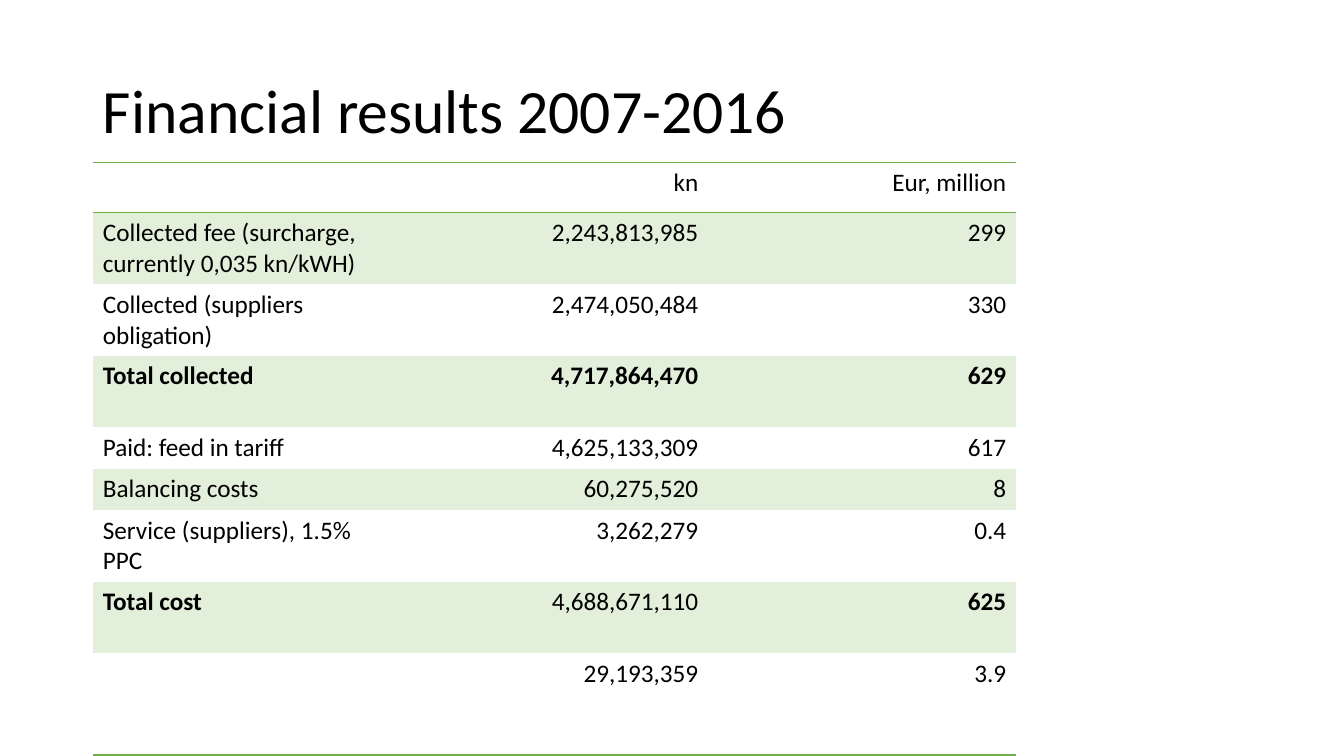
import pptx
import pptx.dml.color
import pptx.enum.text
import pptx.oxml
import pptx.oxml.ns
import pptx.util
from pptx.util import Inches

RGBColor = pptx.dml.color.RGBColor
ALIGN = pptx.enum.text.PP_ALIGN
ANCHOR = pptx.enum.text.MSO_ANCHOR

BLACK = RGBColor(0x00, 0x00, 0x00)
GREEN = RGBColor(0x70, 0xAD, 0x47)
PALE_GREEN = RGBColor(0xE2, 0xEF, 0xDA)

PLAIN_TABLE_STYLE = "{2D5ABB26-0587-4C30-8999-92F81FD0307C}"
TITLE_FONT = {"name": "Calibri", "size": pptx.util.Pt(44), "bold": False}
CELL_FONT = {"name": "Calibri", "size": pptx.util.Pt(18), "bold": False}

# Row height in inches, then the cell texts
RESULTS = [
    (0.5, "", "kn", "Eur, million"),
    (0.71, "Collected fee (surcharge, currently 0,035 kn/kWH)", "2,243,813,985", "299"),
    (0.71, "Collected (suppliers obligation)", "2,474,050,484", "330"),
    (0.71, "Total collected", "4,717,864,470", "629"),
    (0.41, "Paid: feed in tariff", "4,625,133,309", "617"),
    (0.41, "Balancing costs", "60,275,520", "8"),
    (0.71, "Service (suppliers), 1.5% PPC", "3,262,279", "0.4"),
    (0.71, "Total cost", "4,688,671,110", "625"),
    (1.01, "", "29,193,359", "3.9"),
]
BOLD_TEXTS = {"Total collected", "4,717,864,470", "629", "Total cost", "625"}


def format_font(font, values):
    for name, value in values.items():
        setattr(font, name, value)
    font.color.rgb = BLACK


def add_border(cell, side):
    cell._tc.get_or_add_tcPr().append(pptx.oxml.parse_xml(
        f'<a:ln{side} {pptx.oxml.ns.nsdecls("a")} w="12700"><a:solidFill>'
        f'<a:srgbClr val="{GREEN}"/></a:solidFill></a:ln{side}>'))


def place_title(slide, left, top, width, height):
    title = slide.shapes.title
    title.left, title.top, title.width, title.height = left, top, width, height
    title.text_frame.text = "Financial results 2007-2016"
    title.text_frame.vertical_anchor = ANCHOR.MIDDLE
    paragraph = title.text_frame.paragraphs[0]
    paragraph.alignment = ALIGN.LEFT
    paragraph.line_spacing = 0.9
    format_font(paragraph.runs[0].font, TITLE_FONT)


def fill_cell(cell, text, row_index, column_index):
    # Rules above and below the header and under the last row
    if row_index == 0:
        add_border(cell, "T")
    if row_index in (0, len(RESULTS) - 1):
        add_border(cell, "B")
    # Banding on every second row
    if row_index % 2:
        cell.fill.solid()
        cell.fill.fore_color.rgb = PALE_GREEN
    else:
        cell.fill.background()
    # Labels on the left, figures on the right
    paragraph = cell.text_frame.paragraphs[0]
    paragraph.alignment = ALIGN.RIGHT if column_index else ALIGN.LEFT
    if text:
        run = paragraph.add_run()
        run.text = text
        format_font(run.font, CELL_FONT | {"bold": text in BOLD_TEXTS})


def add_results_table(slide, left, top, width):
    height = Inches(sum(row[0] for row in RESULTS))
    frame = slide.shapes.add_table(len(RESULTS), 3, left, top, width, height)
    table = frame.table
    table.first_row = table.horz_banding = False
    table._tbl.tblPr.find(pptx.oxml.ns.qn("a:tableStyleId")).text = PLAIN_TABLE_STYLE
    for column in table.columns:
        column.width = width // 3
    for row_index, (row_height, *texts) in enumerate(RESULTS):
        table.rows[row_index].height = Inches(row_height)
        for column_index, text in enumerate(texts):
            fill_cell(table.cell(row_index, column_index), text, row_index, column_index)


def main():
    presentation = pptx.Presentation()
    presentation.slide_width = Inches(13.33)
    presentation.slide_height = Inches(7.5)
    slide = presentation.slides.add_slide(presentation.slide_layouts[5])
    place_title(slide, Inches(0.92), Inches(0.4), Inches(11.5), Inches(1.45))
    add_results_table(slide, Inches(0.92), Inches(1.61), Inches(9.16))
    presentation.save("out.pptx")


if __name__ == "__main__":
    main()
